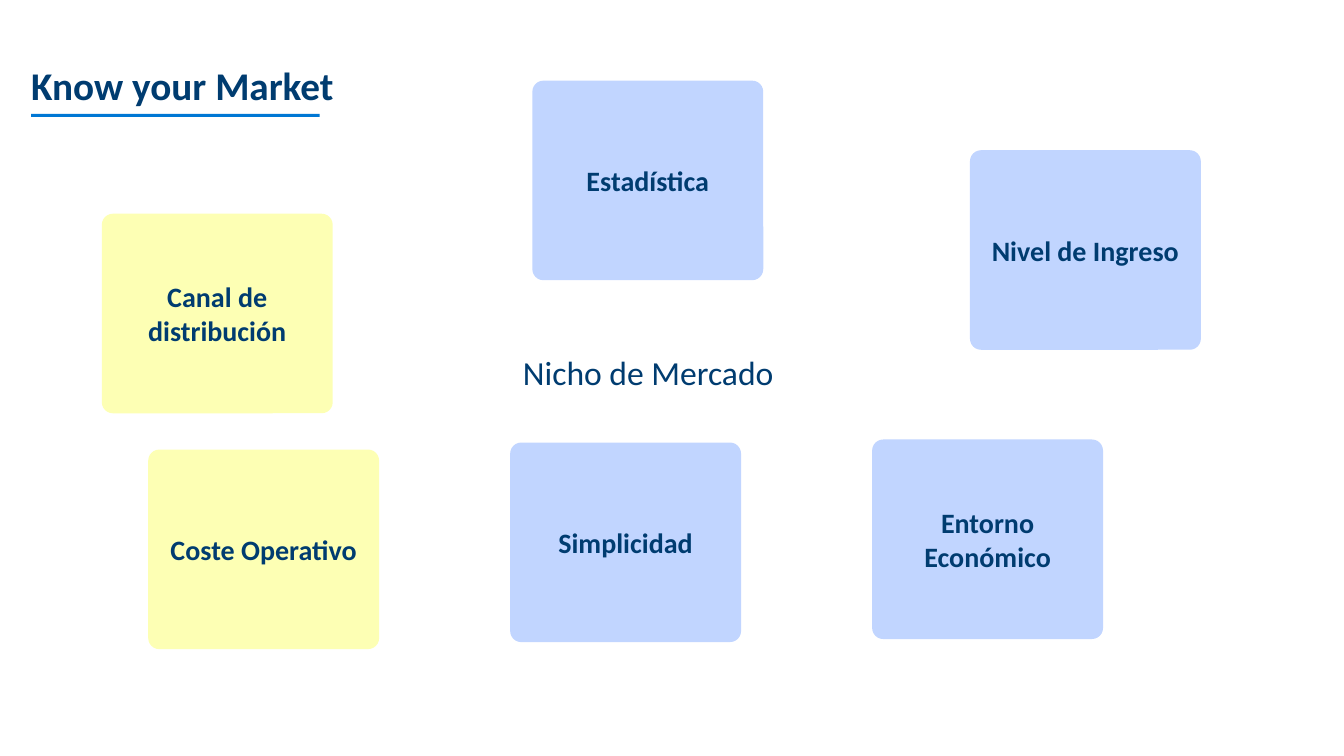
from pptx import Presentation
from pptx.dml.color import RGBColor
from pptx.enum.shapes import MSO_SHAPE as Shape
from pptx.enum.text import MSO_ANCHOR as Anchor, PP_ALIGN as Align
from pptx.util import Pt

PX = 9144  # EMU, 100 px to the inch
NAVY = RGBColor(0x00, 0x3C, 0x70)
BLUE = RGBColor(0x00, 0x77, 0xD4)
LIGHT_BLUE = RGBColor(0xC1, 0xD5, 0xFF)
YELLOW = RGBColor(0xFD, 0xFF, 0xB4)
FONT = "Calibri"

# Content: wording, left, top, colour
TITLE = "Know your Market"
CENTRE = "Nicho de Mercado"
FACTORS = [
    ("Nivel de Ingreso", 962, 149, LIGHT_BLUE),
    ("Entorno Económico", 865, 436, LIGHT_BLUE),
    ("Simplicidad", 506, 439, LIGHT_BLUE),
    ("Estadística", 528, 80, LIGHT_BLUE),
    ("Canal de distribución", 101, 212, YELLOW),
    ("Coste Operativo", 147, 446, YELLOW),
]
CARD_W, CARD_H, CARD_RADIUS, CARD_INSET = 229, 198, 11, 13


def px(*lengths):
    return [length * PX for length in lengths]


def write(holder, wording, size, bold, align, inset=0, anchor=Anchor.TOP):
    frame = holder.text_frame
    frame.word_wrap = True
    frame.vertical_anchor = anchor
    frame.margin_left = frame.margin_right = inset * PX
    frame.margin_top = frame.margin_bottom = inset * PX
    line = frame.paragraphs[0]
    line.alignment = align
    run = line.add_run()
    run.text = wording
    run.font.name = FONT
    run.font.size = Pt(size)
    run.font.bold = bold
    run.font.color.rgb = NAVY


def add_block(kind, left, top, width, height, colour):
    block = shapes.add_shape(kind, *px(left, top, width, height))
    block.shadow.inherit = False
    block.fill.solid()
    block.fill.fore_color.rgb = colour
    block.line.fill.background()
    return block


deck = Presentation()
deck.slide_width, deck.slide_height = px(1333, 750)
shapes = deck.slides.add_slide(deck.slide_layouts[6]).shapes

# Title and its underline
add_block(Shape.RECTANGLE, 31, 113, 286, 3, BLUE)
title = shapes.add_textbox(*px(31, 61, 1270, 48))
write(title, TITLE, 28, True, Align.LEFT)

# Central theme
centre = shapes.add_textbox(*px(343, 349, 600, 52))
write(centre, CENTRE, 24, False, Align.CENTER)

# Factor cards
for wording, left, top, colour in FACTORS:
    card = add_block(Shape.ROUNDED_RECTANGLE, left, top, CARD_W, CARD_H, colour)
    card.adjustments[0] = CARD_RADIUS / CARD_H
    write(card, wording, 20, True, Align.CENTER, CARD_INSET, Anchor.MIDDLE)

deck.save("out.pptx")
